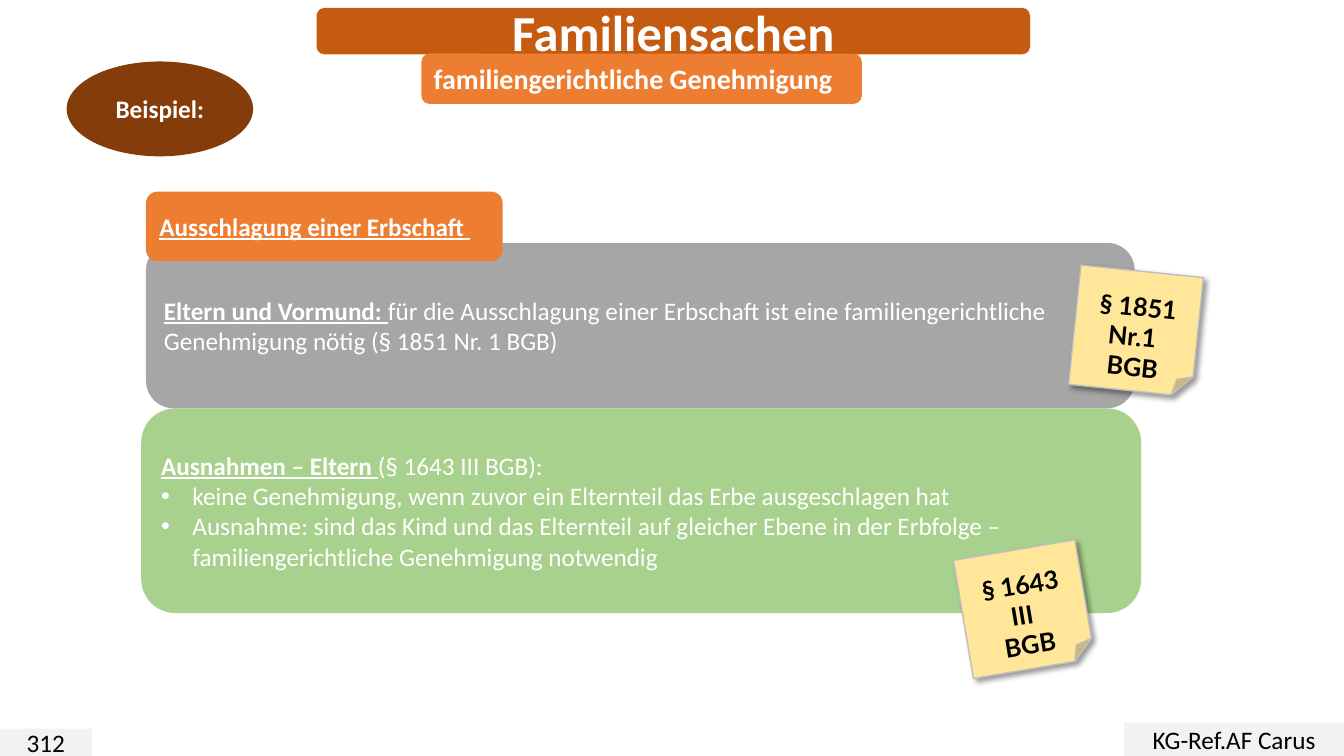
from dataclasses import dataclass
from lxml.etree import SubElement
from pptx import Presentation
from pptx.dml.color import RGBColor
from pptx.enum.shapes import MSO_SHAPE
from pptx.enum.text import MSO_ANCHOR, PP_ALIGN
from pptx.oxml import parse_xml
from pptx.oxml.ns import nsdecls, qn
from pptx.util import Cm, Pt


@dataclass(frozen=True)
class Theme:
    title: str = "C55A11"
    accent: str = "ED7D31"
    example: str = "843C0B"
    rule: str = "A6A6A6"
    exception: str = "A9D18E"
    footer: str = "F2F2F2"
    note: str = "FFE699"
    note_edge: str = "BFBFBF"
    light: str = "FFFFFF"
    dark: str = "000000"
    body_font: str = "Calibri"
    note_font: str = "Lato"
    title_size: int = 36
    subtitle_size: int = 20
    body_size: int = 18


THEME = Theme()

SPAN_STYLES = {
    "plain": {"bold": False, "underline": False},
    "bold": {"bold": True, "underline": False},
    "lead": {"bold": True, "underline": True},
}

TITLE = [[("Familiensachen", "bold")]]
SUBTITLE = [[("familiengerichtliche Genehmigung", "bold")]]
EXAMPLE = [[("Beispiel:", "bold")]]
PAGE_NUMBER = [[("312", "plain")]]
AUTHOR = [[("KG-Ref.AF Carus", "plain")]]
HEADING = [[("Ausschlagung einer Erbschaft ", "lead")]]
RULE = [[
    ("Eltern und Vormund: ", "lead"),
    ("für die Ausschlagung einer Erbschaft ist eine familiengerichtliche "
     "Genehmigung nötig (§ 1851 Nr. 1 BGB)", "plain"),
]]
EXCEPTION = [
    [("Ausnahmen – Eltern ", "lead"), ("(§ 1643 III BGB):", "plain")],
    [("keine Genehmigung, wenn zuvor ein Elternteil das Erbe ausgeschlagen hat", "plain")],
    [("Ausnahme: sind das Kind und das Elternteil auf gleicher Ebene in der Erbfolge – "
      "familiengerichtliche Genehmigung notwendig", "plain")],
]
RULE_NOTE = [[("§ 1851 Nr.1 ", "bold")], [("BGB", "bold")]]
EXCEPTION_NOTE = [[("§ 1643 III ", "bold")], [("BGB", "bold")]]

PAGE_WIDTH, PAGE_HEIGHT = 33.87, 19.05
NOTE_WIDTH, NOTE_HEIGHT, NOTE_TOP_MARGIN = 3.1, 3.02, 0.5
BULLET_INDENT = 0.79
LEFT_EDGE = 3.68
RULE_TOP, RULE_HEIGHT = 6.12, 4.17
AUTHOR_WIDTH, AUTHOR_HEIGHT = 5.54, 0.84
NUMBER_WIDTH, NUMBER_HEIGHT = 2.31, 0.69


def add_bullet(para):
    properties = para._p.get_or_add_pPr()
    indent = int(Cm(BULLET_INDENT))
    properties.set("marL", str(indent))
    properties.set("indent", str(-indent))
    SubElement(properties, qn("a:buFont"), typeface="Arial")
    SubElement(properties, qn("a:buChar"), char="•")


def write_text(box, paragraphs, size, color, font, align, bullets_from=None):
    frame = box.text_frame
    frame.word_wrap = True
    frame.vertical_anchor = MSO_ANCHOR.MIDDLE
    for index, spans in enumerate(paragraphs):
        para = frame.paragraphs[0] if index == 0 else frame.add_paragraph()
        para.alignment = align
        if bullets_from is not None and index >= bullets_from:
            add_bullet(para)
        for text, style in spans:
            span = para.add_run()
            span.text = text
            values = {"name": font, "size": Pt(size), **SPAN_STYLES[style]}
            for name, value in values.items():
                setattr(span.font, name, value)
            span.font.color.rgb = RGBColor.from_string(color)


def add_box(page, kind, area, fill, paragraphs, size=THEME.body_size, color=THEME.light,
            font=THEME.body_font, align=PP_ALIGN.CENTER, bullets_from=None):
    box = page.shapes.add_shape(kind, *map(Cm, area))
    box.shadow.inherit = False
    box.fill.solid()
    box.fill.fore_color.rgb = RGBColor.from_string(fill)
    box.line.fill.background()
    write_text(box, paragraphs, size, color, font, align, bullets_from)
    return box


def add_note(page, left, top, rotation, paragraphs):
    note = add_box(page, MSO_SHAPE.FOLDED_CORNER, (left, top, NOTE_WIDTH, NOTE_HEIGHT),
                   THEME.note, paragraphs, color=THEME.dark, font=THEME.note_font)
    note.rotation = rotation
    note.line.color.rgb = RGBColor.from_string(THEME.note_edge)
    note.line.width = Pt(1)
    note.text_frame.vertical_anchor = MSO_ANCHOR.TOP
    note.text_frame.margin_top = Cm(NOTE_TOP_MARGIN)
    effects = note._element.spPr.find(qn("a:effectLst"))
    effects.append(parse_xml(
        f'<a:outerShdw {nsdecls("a")} blurRad="{Pt(4)}" dist="{Pt(3)}" dir="2700000" '
        f'algn="tl" rotWithShape="0"><a:srgbClr val="{THEME.dark}">'
        '<a:alpha val="40000"/></a:srgbClr></a:outerShdw>'))


def main():
    deck = Presentation()
    deck.slide_width, deck.slide_height = Cm(PAGE_WIDTH), Cm(PAGE_HEIGHT)
    page = deck.slides.add_slide(deck.slide_layouts[6])
    rounded, left = MSO_SHAPE.ROUNDED_RECTANGLE, PP_ALIGN.LEFT

    add_box(page, rounded, (7.98, 0.2, 17.98, 1.17), THEME.title, TITLE, THEME.title_size)
    add_box(page, MSO_SHAPE.RECTANGLE,
            (0, PAGE_HEIGHT - NUMBER_HEIGHT, NUMBER_WIDTH, NUMBER_HEIGHT),
            THEME.footer, PAGE_NUMBER, color=THEME.dark)
    add_box(page, MSO_SHAPE.RECTANGLE,
            (PAGE_WIDTH - AUTHOR_WIDTH, PAGE_HEIGHT - AUTHOR_HEIGHT, AUTHOR_WIDTH, AUTHOR_HEIGHT),
            THEME.footer, AUTHOR, color=THEME.dark)
    add_box(page, rounded, (10.62, 1.35, 11.1, 1.27), THEME.accent, SUBTITLE,
            THEME.subtitle_size, align=left)
    add_box(page, rounded, (LEFT_EDGE, RULE_TOP, 24.92, RULE_HEIGHT), THEME.rule, RULE, align=left)
    add_note(page, 27.08, 6.83, 5.9, RULE_NOTE)
    add_box(page, rounded, (3.56, RULE_TOP + RULE_HEIGHT, 25.2, 5.16), THEME.exception,
            EXCEPTION, align=left, bullets_from=1)
    add_box(page, rounded, (LEFT_EDGE, 4.83, 8.99, 1.75), THEME.accent, HEADING, align=left)
    add_note(page, 24.26, 13.84, 350.4, EXCEPTION_NOTE)
    add_box(page, MSO_SHAPE.OVAL, (1.68, 1.55, 4.7, 2.39), THEME.example, EXAMPLE)

    deck.save("out.pptx")


if __name__ == "__main__":
    main()
